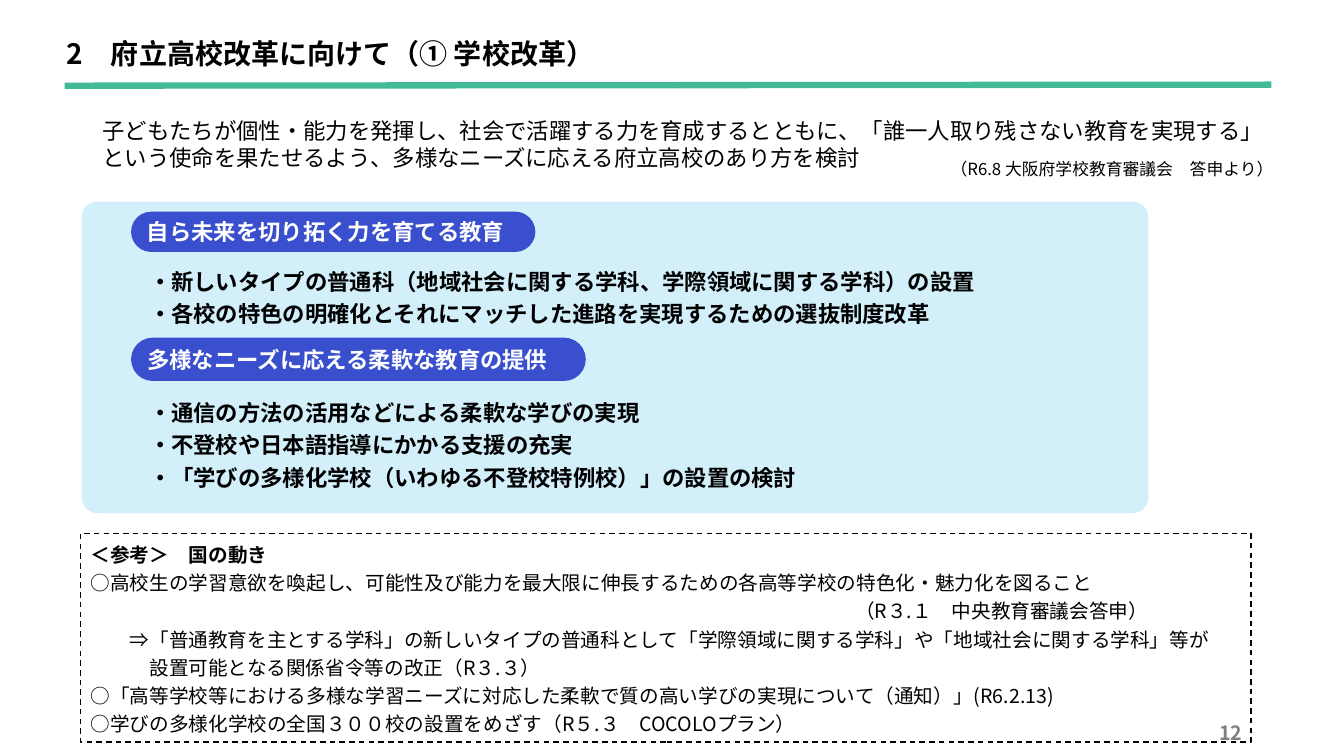
from lxml import etree
from pptx import Presentation
from pptx.dml.color import RGBColor
from pptx.enum.dml import MSO_LINE
from pptx.enum.shapes import MSO_CONNECTOR, MSO_SHAPE as SHAPE
from pptx.enum.text import MSO_ANCHOR as ANCHOR, MSO_AUTO_SIZE, PP_ALIGN as ALIGN
from pptx.oxml.ns import qn
from pptx.util import Inches, Pt

FONT = "Noto Sans CJK JP"
BLACK, WHITE, GRAY = "000000", "FFFFFF", "808080"
GREEN, BLUE, PALE_BLUE = "42BA97", "394FCD", "D2EFFA"

INTRO = ("子どもたちが個性・能力を発揮し、社会で活躍する力を育成するとともに、"
         "「誰一人取り残さない教育を実現する」という使命を果たせるよう、"
         "多様なニーズに応える府立高校のあり方を検討")

# heading, top and size of the pill, top and height of the points, points
POLICIES = [
    ("自ら未来を切り拓く力を育てる教育", 0.1, 4.01, 0.4, 0.56, 0.73, [
        "・新しいタイプの普通科（地域社会に関する学科、学際領域に関する学科）の設置",
        "・各校の特色の明確化とそれにマッチした進路を実現するための選抜制度改革"]),
    ("多様なニーズに応える柔軟な教育の提供", 1.35, 4.51, 0.43, 1.86, 1.06, [
        "・通信の方法の活用などによる柔軟な学びの実現",
        "・不登校や日本語指導にかかる支援の充実",
        "・「学びの多様化学校（いわゆる不登校特例校）」の設置の検討"]),
]

# indent in full-width characters, text
NATIONAL_TRENDS = [
    (0, "＜参考＞　国の動き"),
    (0, "○高校生の学習意欲を喚起し、可能性及び能力を最大限に伸長するための各高等学校の特色化・魅力化を図ること"),
    (39, "（R３.１　中央教育審議会答申）"),
    (2, "⇒「普通教育を主とする学科」の新しいタイプの普通科として「学際領域に関する学科」や「地域社会に関する学科」等が"),
    (3, "設置可能となる関係省令等の改正（R３.３）"),
    (0, "○「高等学校等における多様な学習ニーズに対応した柔軟で質の高い学びの実現について（通知）」(R6.2.13)"),
    (0, "○学びの多様化学校の全国３００校の設置をめざす（R５.３　COCOLOプラン）"),
]


def rgb(color):
    return RGBColor.from_string(color)


def format_paragraph(p, size, color=BLACK, bold=False, align=ALIGN.LEFT, spacing=None):
    p.alignment = align
    if spacing:
        p.line_spacing = spacing
    for r in p.runs:
        r.font.size = Pt(size)
        r.font.bold = bold
        r.font.color.rgb = rgb(color)
        r.font.name = FONT
        etree.SubElement(r.font._element, qn("a:ea")).set("typeface", FONT)


def fill_text(sp, lines, size, inset=0.05, anchor=ANCHOR.TOP, **style):
    tf = sp.text_frame
    tf.word_wrap = True
    tf.auto_size = MSO_AUTO_SIZE.NONE
    tf.vertical_anchor = anchor
    tf.margin_top = tf.margin_bottom = Inches(inset)
    tf.text = "\n".join(lines)
    for p in tf.paragraphs:
        format_paragraph(p, size, **style)
    return tf


def add_text(s, box, lines, size, **style):
    return fill_text(s.shapes.add_textbox(*map(Inches, box)), lines, size, **style)


def add_box(s, kind, box, fill=None):
    sp = s.shapes.add_shape(kind, *map(Inches, box))
    sp.shadow.inherit = False
    sp.line.fill.background()
    if fill:
        sp.fill.solid()
        sp.fill.fore_color.rgb = rgb(fill)
    else:
        sp.fill.background()
    return sp


def add_header(s, x, y, w):
    add_text(s, (x, y, 9.22, 0.47), ["2　府立高校改革に向けて（① 学校改革）"], 20,
             inset=0.1, bold=True)
    rule = s.shapes.add_connector(MSO_CONNECTOR.STRAIGHT, Inches(x + 0.08), Inches(y + 0.59),
                                  Inches(x + w), Inches(y + 0.58))
    rule.line.color.rgb = rgb(GREEN)
    rule.line.width = Pt(4.5)
    etree.SubElement(rule._element.spPr, qn("a:effectLst"))


def add_intro(s, x, y, w, h):
    tf = add_text(s, (x, y, w, h), [INTRO], 16, inset=0.1)
    tf.paragraphs[0].space_after = Pt(6)
    add_text(s, (x + 8.41, y + 0.43, 3.73, 0.33),
             ["（R6.8 大阪府学校教育審議会　答申より）"], 12, spacing=1.2)


def add_policy_panel(s, x, y, w, h):
    panel = add_box(s, SHAPE.ROUNDED_RECTANGLE, (x, y, w, h), PALE_BLUE)
    panel.adjustments[0] = 0.05
    for heading, pill_y, pill_w, pill_h, points_y, points_h, points in POLICIES:
        pill = add_box(s, SHAPE.ROUNDED_RECTANGLE, (x + 0.49, y + pill_y, pill_w, pill_h), BLUE)
        pill.adjustments[0] = 0.5
        fill_text(pill, [heading], 16, anchor=ANCHOR.MIDDLE, color=WHITE, bold=True)
        add_text(s, (x + 0.57, y + points_y, w - 0.71, points_h), points, 16,
                 bold=True, spacing=1.2)


def add_reference_box(s, x, y, w, h):
    size = 14
    sp = add_box(s, SHAPE.RECTANGLE, (x, y, w, h))
    sp.line.color.rgb = rgb(BLACK)
    sp.line.width = Pt(1)
    sp.line.dash_style = MSO_LINE.DASH
    tf = fill_text(sp, [text for _, text in NATIONAL_TRENDS], size, spacing=1.2)
    tf.paragraphs[0].runs[0].font.bold = True
    for p, (indent, _) in zip(tf.paragraphs, NATIONAL_TRENDS):
        if indent:
            p._p.get_or_add_pPr().set("marL", str(Pt(indent * size)))


def main():
    prs = Presentation()
    prs.slide_width, prs.slide_height = Inches(13.33), Inches(7.5)
    s = prs.slides.add_slide(prs.slide_layouts[6])
    add_policy_panel(s, 0.81, 2, 10.58, 3.09)
    add_text(s, (9.42, 7.1, 3, 0.4), ["12"], 14, color=GRAY, bold=True, align=ALIGN.RIGHT)
    add_intro(s, 0.92, 1.06, 11.87, 0.73)
    add_header(s, 0.56, 0.26, 12.05)
    add_reference_box(s, 0.8, 5.29, 11.61, 2.07)
    prs.save("out.pptx")


if __name__ == "__main__":
    main()
